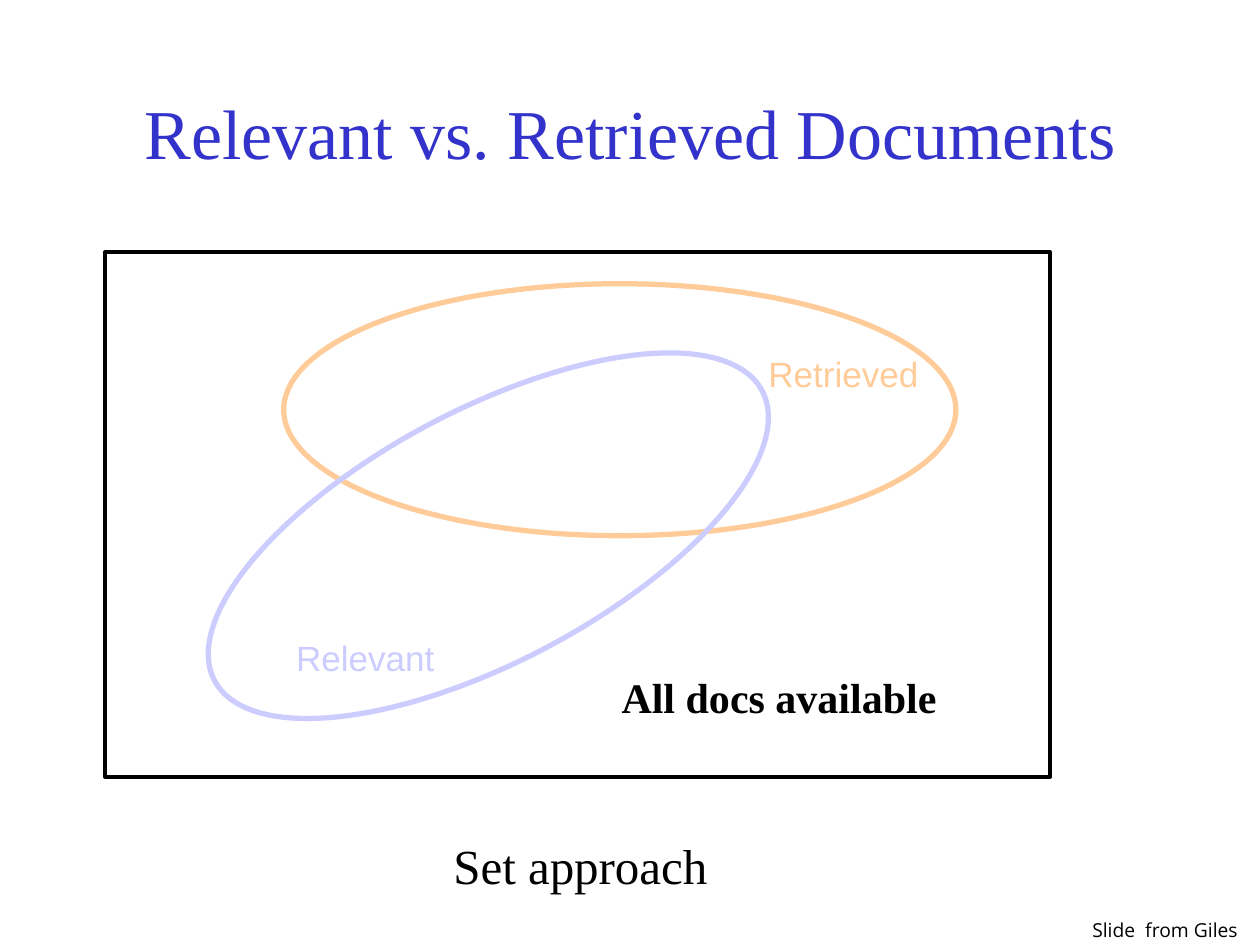
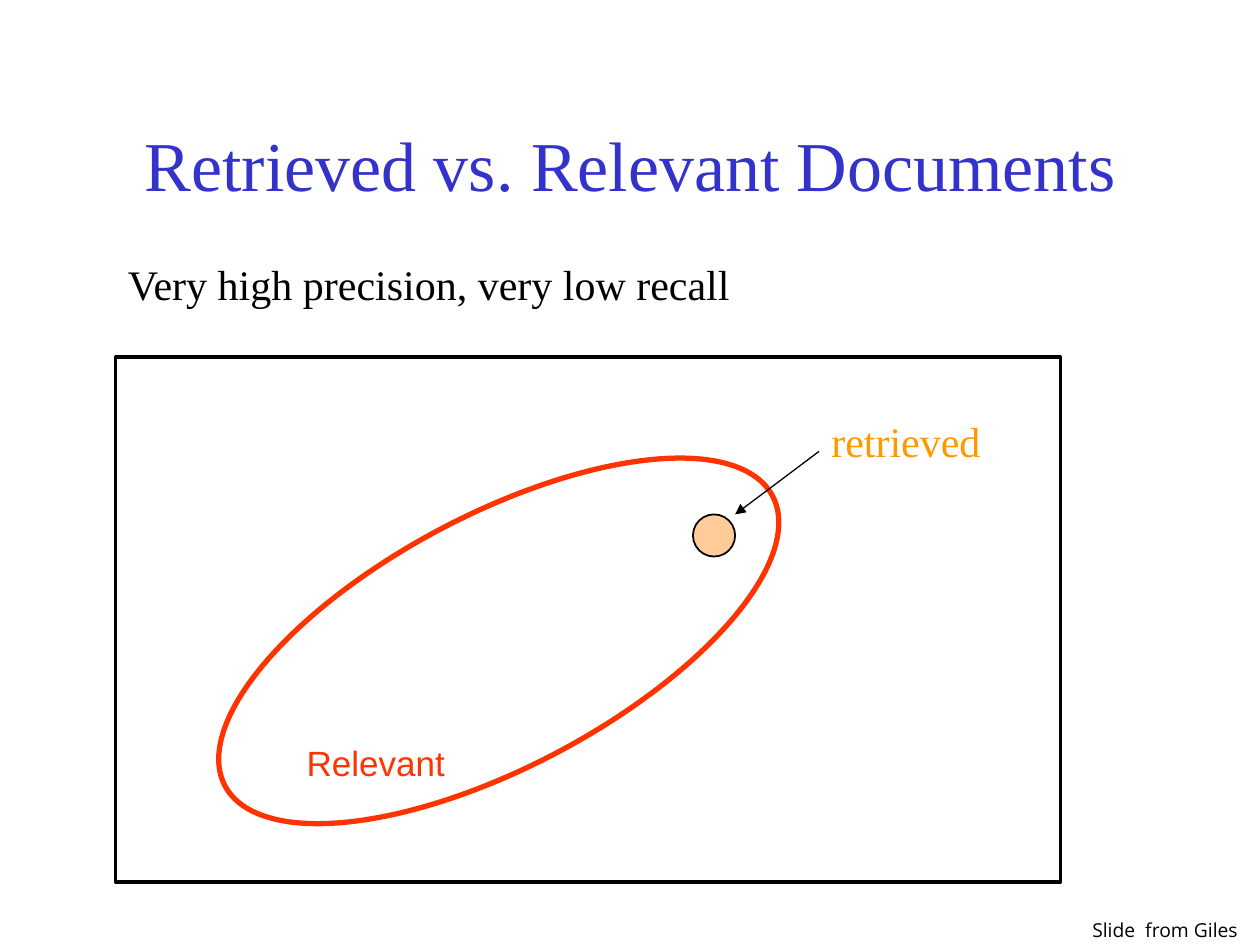
from dataclasses import dataclass
from lxml.etree import SubElement
from pptx import Presentation
from pptx.dml.color import RGBColor
from pptx.enum.shapes import MSO_CONNECTOR, MSO_SHAPE
from pptx.enum.text import MSO_ANCHOR, PP_ALIGN
from pptx.oxml.ns import qn
from pptx.util import Cm, Pt


@dataclass(frozen=True)
class Theme:
    serif: str = "Times New Roman"
    sans: str = "Arial"
    foot: str = "Open Sans"
    blue: str = "3333CC"
    black: str = "000000"
    peach: str = "FFCC99"
    lilac: str = "CCCCFF"
    red: str = "FF3300"
    orange: str = "FF9900"
    head: int = 40
    large: int = 28
    body: int = 24
    tag: int = 20
    small: int = 11
    thick: float = 3
    frame: float = 2.25
    rim: float = 1
    thin: float = 0.75


T = Theme()

# Content: places are in centimetres; frame is the corner of the diagram
SETS = {
    "title": "Relevant vs. Retrieved Documents", "top": 1.07,
    "frame": (2.12, 5.08), "hue": T.lilac, "group": True,
    "ovals": [((5.72, 5.72, 13.55, 5.08), None, T.peach, T.thick)],
    "labels": [
        ("Retrieved", (15.24, 6.99, 4.4, 1.09), T.sans, T.tag, T.peach, False),
        ("All docs available", (12.28, 13.42, 6.86, 1.27), T.serif, T.body, T.black, True),
    ],
    "notes": [("Set approach", (8.89, 16.72, 5.64, 1.45), T.serif, T.large, T.black, False)],
    "arrows": [],
}
PRECISE = {
    "title": "Retrieved vs. Relevant Documents", "top": 1.7,
    "frame": (2.33, 7.2), "hue": T.red, "group": False,
    "ovals": [((13.97, 10.37, 0.85, 0.85), T.peach, T.black, T.rim)],
    "labels": [("retrieved", (16.51, 8.26, 3.53, 1.27), T.serif, T.body, T.orange, False)],
    "notes": [("Very high precision, very low recall", (2.33, 5.08, 12.73, 1.27),
               T.serif, T.body, T.black, False)],
    "arrows": [(16.51, 9.1, 14.82, 10.37)],
}
FOOTER = ("Slide  from Giles", (21.77, 18.39, 3.61, 0.74), T.foot, T.small, T.black, False)

# Shared diagram parts, measured from the corner of the frame
FRAME = (19.05, 10.58)
OVAL = (1.48, 3.18, 12.49, 5.08)
TAG = (3.6, 7.62, 3.3, 1.09)
TILT = 332.1


def color(code):
    return RGBColor.from_string(code)


def place(base, part):
    return (base[0] + part[0], base[1] + part[1], *part[2:])


def write(shapes, text, box, font, size, hue, bold=False):
    item = shapes.add_textbox(*map(Cm, box))
    frame = item.text_frame
    frame.word_wrap = False
    run = frame.paragraphs[0].add_run()
    run.text = text
    run.font.name, run.font.size, run.font.bold = font, Pt(size), bold
    run.font.color.rgb = color(hue)
    return frame


def draw(shapes, kind, box, fill, line, width, turn=0):
    item = shapes.add_shape(kind, *map(Cm, box))
    item.shadow.inherit = False
    item.rotation = turn
    if fill:
        item.fill.solid()
        item.fill.fore_color.rgb = color(fill)
    else:
        item.fill.background()
    item.line.color.rgb = color(line)
    item.line.width = Pt(width)


def point(shapes, ends):
    item = shapes.add_connector(MSO_CONNECTOR.STRAIGHT, *map(Cm, ends))
    item.line.color.rgb = color(T.black)
    item.line.width = Pt(T.thin)
    SubElement(item.line._get_or_add_ln(), qn("a:tailEnd"), type="triangle")
    SubElement(item._element.spPr, qn("a:effectLst"))


def build(deck, page):
    shapes = deck.slides.add_slide(deck.slide_layouts[6]).shapes

    # Title
    title = write(shapes, page["title"], (1.91, page["top"], 21.59, 3.18),
                  T.serif, T.head, T.blue)
    title.word_wrap = True
    title.vertical_anchor = MSO_ANCHOR.MIDDLE
    title.paragraphs[0].alignment = PP_ALIGN.CENTER

    # Diagram
    parts = shapes.add_group_shape().shapes if page["group"] else shapes
    base = page["frame"]
    draw(parts, MSO_SHAPE.RECTANGLE, (*base, *FRAME), None, T.black, T.frame)
    for oval in page["ovals"]:
        draw(parts, MSO_SHAPE.OVAL, *oval)
    draw(parts, MSO_SHAPE.OVAL, place(base, OVAL), None, page["hue"], T.thick, TILT)
    write(parts, "Relevant", place(base, TAG), T.sans, T.tag, page["hue"])
    for label in page["labels"]:
        write(parts, *label)
    for ends in page["arrows"]:
        point(parts, ends)

    # Notes and footer
    for note in page["notes"] + [FOOTER]:
        write(shapes, *note)


def main():
    deck = Presentation()
    deck.slide_width, deck.slide_height = Cm(25.4), Cm(19.05)
    for page in (SETS, PRECISE):
        build(deck, page)
    deck.save("out.pptx")


if __name__ == "__main__":
    main()
